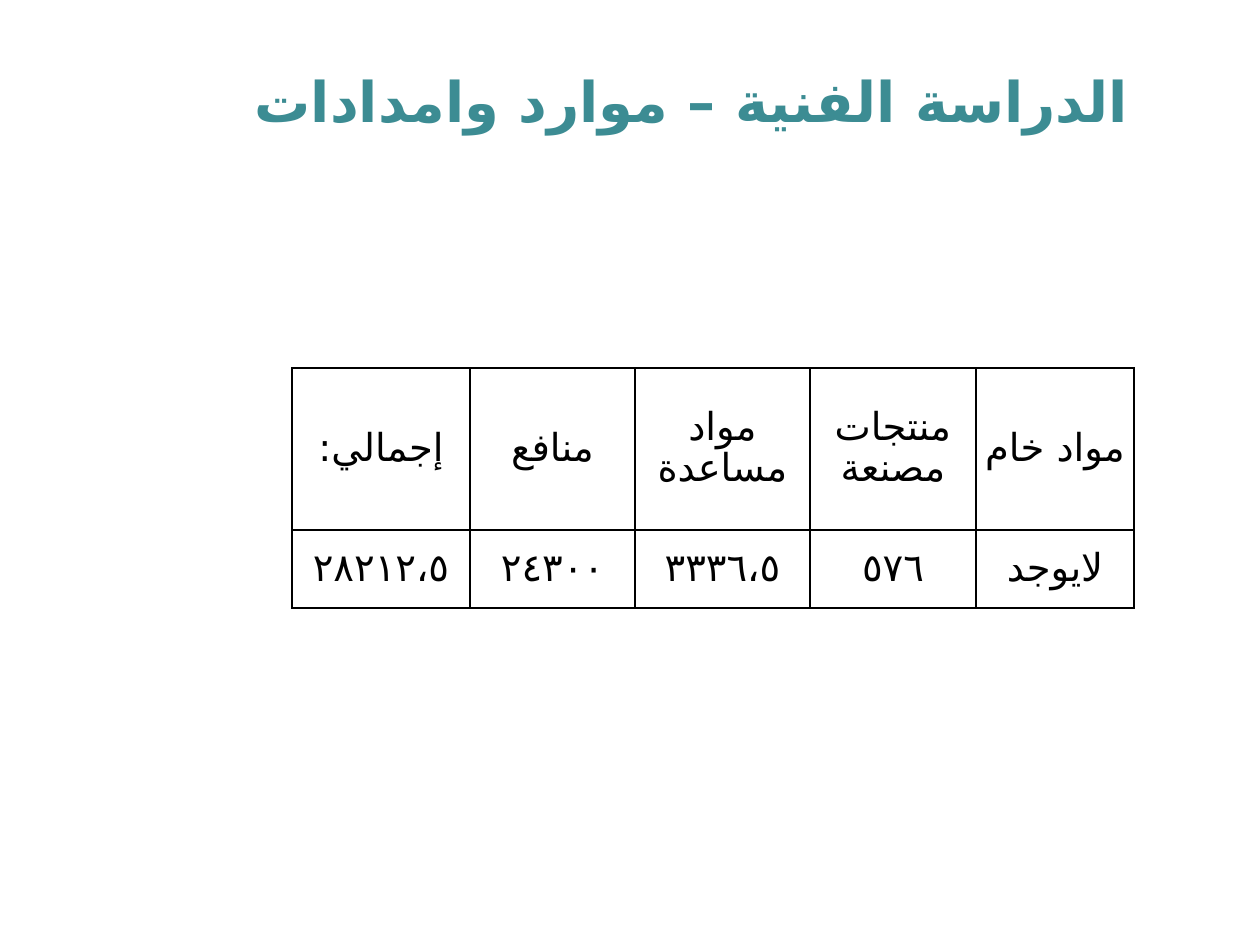
import pptx
import pptx.dml.color
import pptx.enum.text
import pptx.oxml
import pptx.oxml.ns
import pptx.util

SCALE = 914400 // 126
COLORS = {"title": "3C8C93", "text": "000000", "border": "000000"}
ARABIC_FONT = "DejaVu Sans"
COLUMN_WIDTHS = [178, 165, 175, 166, 158]
ROW_HEIGHTS = [162, 78]
RESOURCES = [
    ["إجمالي:", "منافع", "مواد مساعدة", "منتجات مصنعة", "مواد خام"],
    ["٢٨٢١٢،٥", "٢٤٣٠٠", "٣٣٣٦،٥", "٥٧٦", "لايوجد"],
]


def px(value):
    return pptx.util.Emu(value * SCALE)


def xml_element(tag, **attributes):
    element = pptx.oxml.parse_xml(f"<a:{tag} {pptx.oxml.ns.nsdecls('a')}/>")
    for name, value in attributes.items():
        element.set(name, value)
    return element


def format_runs(paragraph, font_name, size, color, bold=False):
    for run in paragraph.runs:
        font = run.font
        font.name = font_name
        font.size = pptx.util.Pt(size)
        font.bold = bold
        font.color.rgb = pptx.dml.color.RGBColor.from_string(COLORS[color])
        run._r.get_or_add_rPr().append(xml_element("cs", typeface=ARABIC_FONT))


def add_title(slide, text):
    title = slide.shapes.title
    title.left, title.top, title.width, title.height = map(px, (242, 42, 966, 116))
    title.text_frame.text = text
    title.text_frame.vertical_anchor = pptx.enum.text.MSO_ANCHOR.MIDDLE
    paragraph = title.text_frame.paragraphs[0]
    paragraph.alignment = pptx.enum.text.PP_ALIGN.LEFT
    format_runs(paragraph, "Cabin", 32, "title", bold=True)


def add_borders(cell):
    properties = cell._tc.get_or_add_tcPr()
    for position, side in enumerate(("lnL", "lnR", "lnT", "lnB")):
        line = xml_element(side, w=str(pptx.util.Pt(1)))
        fill = xml_element("solidFill")
        fill.append(xml_element("srgbClr", val=COLORS["border"]))
        line.append(fill)
        properties.insert(position, line)


def fill_cell(cell, text):
    cell.text_frame.text = text
    cell.vertical_anchor = pptx.enum.text.MSO_ANCHOR.MIDDLE
    cell.margin_left = cell.margin_right = px(9)
    cell.margin_top = cell.margin_bottom = 0
    cell.fill.background()
    add_borders(cell)
    paragraph = cell.text_frame.paragraphs[0]
    paragraph.alignment = pptx.enum.text.PP_ALIGN.CENTER
    paragraph.line_spacing = 0.92
    paragraph._p.get_or_add_pPr().set("rtl", "1")
    format_runs(paragraph, "Arial", 22, "text")


def add_resource_table(slide):
    frame = slide.shapes.add_table(
        len(ROW_HEIGHTS), len(COLUMN_WIDTHS), px(292), px(368),
        px(sum(COLUMN_WIDTHS)), px(sum(ROW_HEIGHTS)))
    table = frame.table
    table.first_row = table.horz_banding = False
    for column, width in zip(table.columns, COLUMN_WIDTHS):
        column.width = px(width)
    for row, height, texts in zip(table.rows, ROW_HEIGHTS, RESOURCES):
        row.height = px(height)
        for cell, text in zip(row.cells, texts):
            fill_cell(cell, text)


def main():
    presentation = pptx.Presentation()
    presentation.slide_width = px(1260)
    presentation.slide_height = px(945)
    slide = presentation.slides.add_slide(presentation.slide_layouts[5])
    add_title(slide, "الدراسة الفنية – موارد وامدادات")
    add_resource_table(slide)
    presentation.save("out.pptx")


if __name__ == "__main__":
    main()
